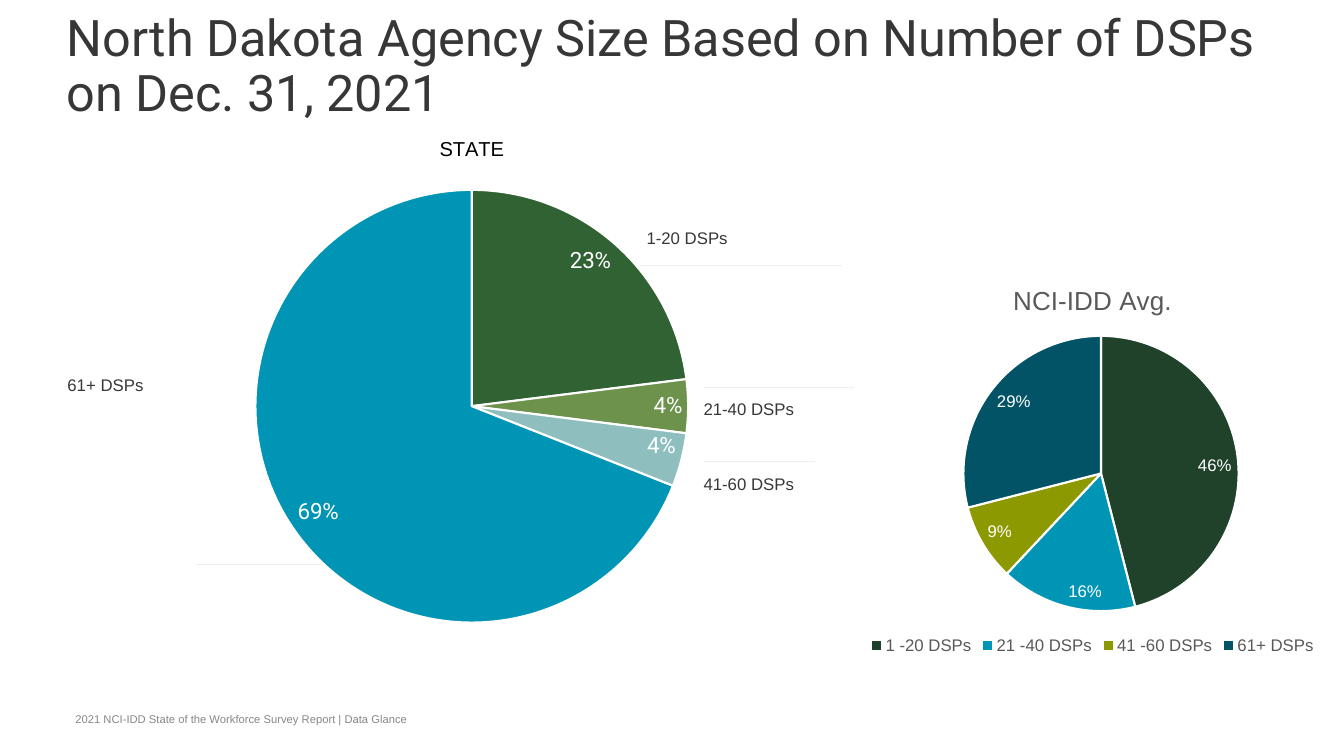
from pptx import Presentation
from pptx.chart.data import CategoryChartData
from pptx.dml.color import RGBColor
from pptx.enum.chart import XL_CHART_TYPE, XL_LABEL_POSITION, XL_LEGEND_POSITION
from pptx.enum.shapes import MSO_CONNECTOR
from pptx.enum.text import MSO_ANCHOR, PP_ALIGN
from pptx.oxml import parse_xml
from pptx.oxml.ns import nsdecls
from pptx.util import Cm, Pt


def paint(item, color):
    """Set a solid fill or a font colour from a hex string."""
    if hasattr(item, "solid"):
        item.solid()
        item.fore_color.rgb = RGBColor.from_string(color)
    else:
        item.color.rgb = RGBColor.from_string(color)


def write(box, text, size, color, face="Arial", space=1.0):
    """Add one run to the first paragraph of a text frame."""
    para = box.paragraphs[0]
    para.line_spacing = space
    run = para.add_run()
    run.text = text
    run.font.name, run.font.size, run.font.bold = face, Pt(size), False
    paint(run.font, color)
    return para


prs = Presentation()
prs.slide_width, prs.slide_height = Cm(33.87), Cm(19.05)
slide = prs.slides.add_slide(prs.slide_layouts[6])
shapes = slide.shapes

# Pie charts: name, place, plot area, categories, values, colours,
# title size and colour, label size and face, legend
pies = [
    ("STATE", (1.68, 2.92, 20.42, 14.35), (0.19, 0.13, 0.62, 0.76),
     ["1", "2", "3", "4"], [0.23, 0.04, 0.04, 0.69],
     ["316234", "6C924C", "8EBEBE", "0094B5"],
     14.4, "000000", 16, "Roboto", False),
    ("NCI-IDD Avg.", (20.45, 6.68, 14.17, 9.91), (0.27, 0.18, 0.49, 0.7),
     ["1 -20 DSPs", "21 -40 DSPs", "41 -60 DSPs", "61+ DSPs"],
     [0.46, 0.16, 0.09, 0.29],
     ["20412A", "0094B5", "8D9900", "015365"],
     18.6, "595959", 12, "Arial", True),
]
for name, place, plot, cats, vals, hues, size, tone, mark, face, key in pies:
    data = CategoryChartData(number_format="0%")
    data.categories = cats
    data.add_series(name, vals)
    chart = shapes.add_chart(
        XL_CHART_TYPE.PIE, *[Cm(n) for n in place], data).chart
    chart.font.name, chart.font.size = "Arial", Pt(12)
    paint(chart.font, "595959")

    # Title and legend
    chart.has_title = True
    write(chart.chart_title.text_frame, name, size, tone)
    chart.chart_title.include_in_layout = False
    chart.has_legend = key
    if key:
        chart.legend.position = XL_LEGEND_POSITION.BOTTOM
        chart.legend.include_in_layout = False

    # Slices
    pie = chart.plots[0]
    pie.vary_by_categories = True
    for i, hue in enumerate(hues):
        look = pie.series[0].points[i].format
        paint(look.fill, hue)
        paint(look.line.fill, "FFFFFF")
        look.line.width = Pt(1.5)

    # Values inside the slices
    pie.has_data_labels = True
    tags = pie.data_labels
    tags.show_value, tags.show_percentage = True, False
    tags.number_format, tags.number_format_is_linked = "0%", False
    tags.position = XL_LABEL_POSITION.INSIDE_END
    tags.font.name, tags.font.size = face, Pt(mark)
    paint(tags.font, "FFFFFF")

    # Plot area
    area = chart._chartSpace.chart.plotArea
    for old in area.findall("{*}layout"):
        area.remove(old)
    sides = "".join(f'<c:{k} val="{v}"/>' for k, v in zip("xywh", plot))
    area.insert(0, parse_xml(
        f'<c:layout {nsdecls("c")}><c:manualLayout>'
        '<c:layoutTarget val="inner"/><c:xMode val="edge"/>'
        f'<c:yMode val="edge"/>{sides}</c:manualLayout></c:layout>'))

# Texts: words, place, size, colour, face, line spacing, alignment, anchor
left, right = PP_ALIGN.LEFT, PP_ALIGN.RIGHT
top, foot = MSO_ANCHOR.TOP, MSO_ANCHOR.BOTTOM
label = (12, "373737", "Arial", 1.1)
texts = [
    ("North Dakota Agency Size Based on Number of DSPs on Dec. 31, 2021",
     (1.68, 0.33, 30.5, 1.93), (36, "373737", "Roboto", 0.9), left, top),
    ("1-20 DSPs", (13.89, 5.69, 4.45, 0.79), label, right, top),
    ("21-40 DSPs", (17.73, 10.01, 3.33, 0.64), label, left, top),
    ("41-60 DSPs", (17.73, 11.89, 3.76, 0.89), label, left, top),
    ("61+ DSPs", (1.7, 9.4, 3.89, 0.91), label, left, top),
    ("2021 NCI-IDD State of the Workforce Survey Report | Data Glance",
     (1.9, 17.91, 19.96, 0.38), (8, "878787", "Arial", 1.0), left, foot),
]
for words, place, style, align, anchor in texts:
    box = shapes.add_textbox(*[Cm(n) for n in place]).text_frame
    box.word_wrap = True
    box.margin_left = box.margin_right = Cm(0)
    box.margin_top = box.margin_bottom = Cm(0)
    box.vertical_anchor = anchor
    write(box, words, *style).alignment = align

# Leader lines: start, end, height
for start, end, y in [(21.21, 16.13, 6.68), (17.73, 21.51, 9.75),
                      (17.73, 20.55, 11.63), (4.93, 8.13, 14.22)]:
    rule = shapes.add_connector(
        MSO_CONNECTOR.STRAIGHT, Cm(start), Cm(y), Cm(end), Cm(y))
    paint(rule.line.fill, "EEEEEE")
    rule.line.width = Pt(0.5)
    rule._element.spPr.append(parse_xml(f'<a:effectLst {nsdecls("a")}/>'))

prs.save("out.pptx")
